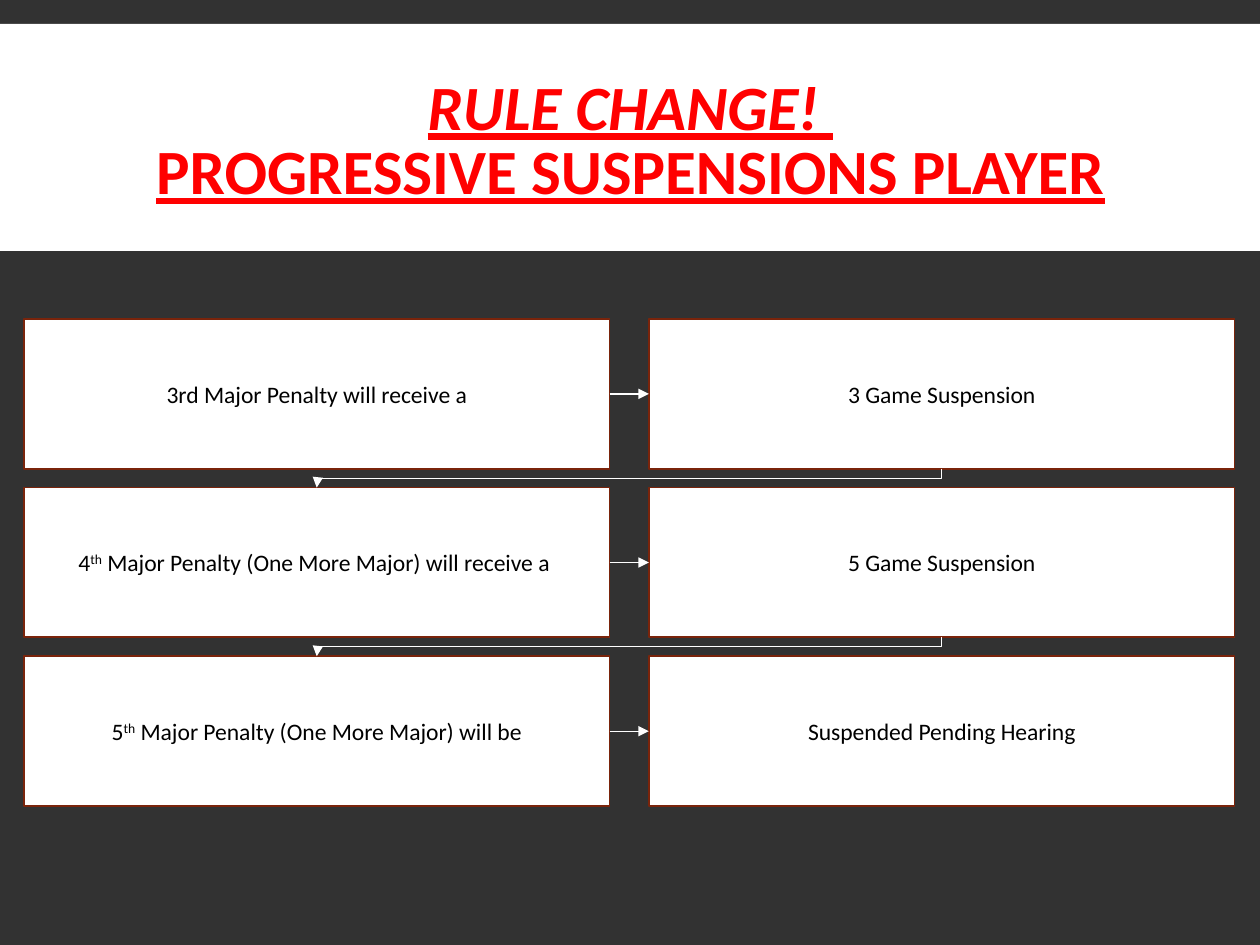
from lxml import etree
from pptx import Presentation
from pptx import util as u
from pptx.dml.color import RGBColor
from pptx.enum import shapes, text
from pptx.oxml.ns import qn

COLORS = {"dark": "323232", "white": "FFFFFF", "red": "FF0000",
          "rust": "7A240B", "black": "000000"}
FONT = "Calibri"


def add_run(para, words, size, color):
    span = para.add_run()
    span.text = words
    span.font.name = FONT
    span.font.size = u.Pt(size)
    span.font.color.rgb = RGBColor.from_string(COLORS[color])
    return span


def add_arrow(kind, x1, y1, x2, y2):
    """Add a thin white connector with a triangle at its end (lengths in cm)."""
    arrow = slide.shapes.add_connector(kind, u.Cm(x1), u.Cm(y1), u.Cm(x2), u.Cm(y2))
    arrow.line.color.rgb = RGBColor.from_string(COLORS["white"])
    arrow.line.width = u.Pt(0.75)
    etree.SubElement(arrow.line._get_or_add_ln(), qn("a:tailEnd"), type="triangle")
    etree.SubElement(arrow._element.spPr, qn("a:effectLst"))
    return arrow


deck = Presentation()
deck.slide_width, deck.slide_height = u.Cm(25.4), u.Cm(19.05)
slide = deck.slides.add_slide(deck.slide_layouts[6])
slide.background.fill.solid()
slide.background.fill.fore_color.rgb = RGBColor.from_string(COLORS["dark"])

# Title on its white band
band = slide.shapes.add_shape(shapes.MSO_SHAPE.RECTANGLE, 0, u.Cm(0.48),
                              deck.slide_width, u.Cm(4.58))
band.shadow.inherit = False
band.fill.solid()
band.fill.fore_color.rgb = RGBColor.from_string(COLORS["white"])
band.line.fill.background()

title = slide.shapes.add_textbox(u.Cm(2.51), u.Cm(0.79), u.Cm(20.4), u.Cm(4.19))
title.text_frame.word_wrap = True
title.text_frame.vertical_anchor = text.MSO_ANCHOR.MIDDLE
para = title.text_frame.paragraphs[0]
para.alignment = text.PP_ALIGN.CENTER
para.line_spacing = 0.85
headline = add_run(para, "RULE CHANGE! ", 36, "red")
headline.font.italic = True
para.add_line_break()
subject = add_run(para, "PROGRESSIVE SUSPENSIONS PLAYER", 36, "red")
for span in (headline, subject):
    span.font.bold = True
    span.font.underline = True

# Penalty and consequence boxes; each text is a list of (words, superscript)
LEFT, TOP = 0.48, 6.43
WIDTH, HEIGHT = 11.81, 3.02
COLUMN_STEP, ROW_STEP = 12.6, 3.4
steps = [
    ([("3rd Major Penalty will receive a", False)],
     [("3 Game Suspension", False)]),
    ([("4", False), ("th", True),
      (" Major Penalty (One More Major) will receive a ", False)],
     [("5 Game Suspension", False)]),
    ([("5", False), ("th", True),
      (" Major Penalty (One More Major) will be", False)],
     [("Suspended Pending Hearing", False)]),
]
rows = []
for row, step in enumerate(steps):
    boxes = []
    for column, pieces in enumerate(step):
        box = slide.shapes.add_shape(
            shapes.MSO_SHAPE.RECTANGLE,
            u.Cm(LEFT + column * COLUMN_STEP), u.Cm(TOP + row * ROW_STEP),
            u.Cm(WIDTH), u.Cm(HEIGHT))
        box.shadow.inherit = False
        box.fill.solid()
        box.fill.fore_color.rgb = RGBColor.from_string(COLORS["white"])
        box.line.color.rgb = RGBColor.from_string(COLORS["rust"])
        box.line.width = u.Pt(1)
        box.text_frame.word_wrap = True
        box.text_frame.vertical_anchor = text.MSO_ANCHOR.MIDDLE
        para = box.text_frame.paragraphs[0]
        para.alignment = text.PP_ALIGN.CENTER
        for words, superscript in pieces:
            span = add_run(para, words, 13.5, "black")
            if superscript:
                span.font._element.set("baseline", "30000")
        boxes.append(box)
    rows.append(boxes)

# Elbow arrows down to the next row: drawn upright, then turned a quarter
gap = ROW_STEP - HEIGHT
middle_x = LEFT + (WIDTH + COLUMN_STEP) / 2
for row in range(len(rows) - 1):
    middle_y = TOP + row * ROW_STEP + HEIGHT + gap / 2
    elbow = add_arrow(shapes.MSO_CONNECTOR.ELBOW,
                      middle_x - gap / 2, middle_y - COLUMN_STEP / 2,
                      middle_x + gap / 2, middle_y + COLUMN_STEP / 2)
    elbow._element.spPr.find(qn("a:xfrm")).set("rot", str(90 * 60000))

# Straight arrows from penalty to consequence
for row, (penalty, consequence) in enumerate(rows):
    y = TOP + row * ROW_STEP + HEIGHT / 2
    arrow = add_arrow(shapes.MSO_CONNECTOR.STRAIGHT, LEFT + WIDTH, y,
                      LEFT + COLUMN_STEP, y)
    arrow.begin_connect(penalty, 3)
    arrow.end_connect(consequence, 1)

deck.save("out.pptx")
